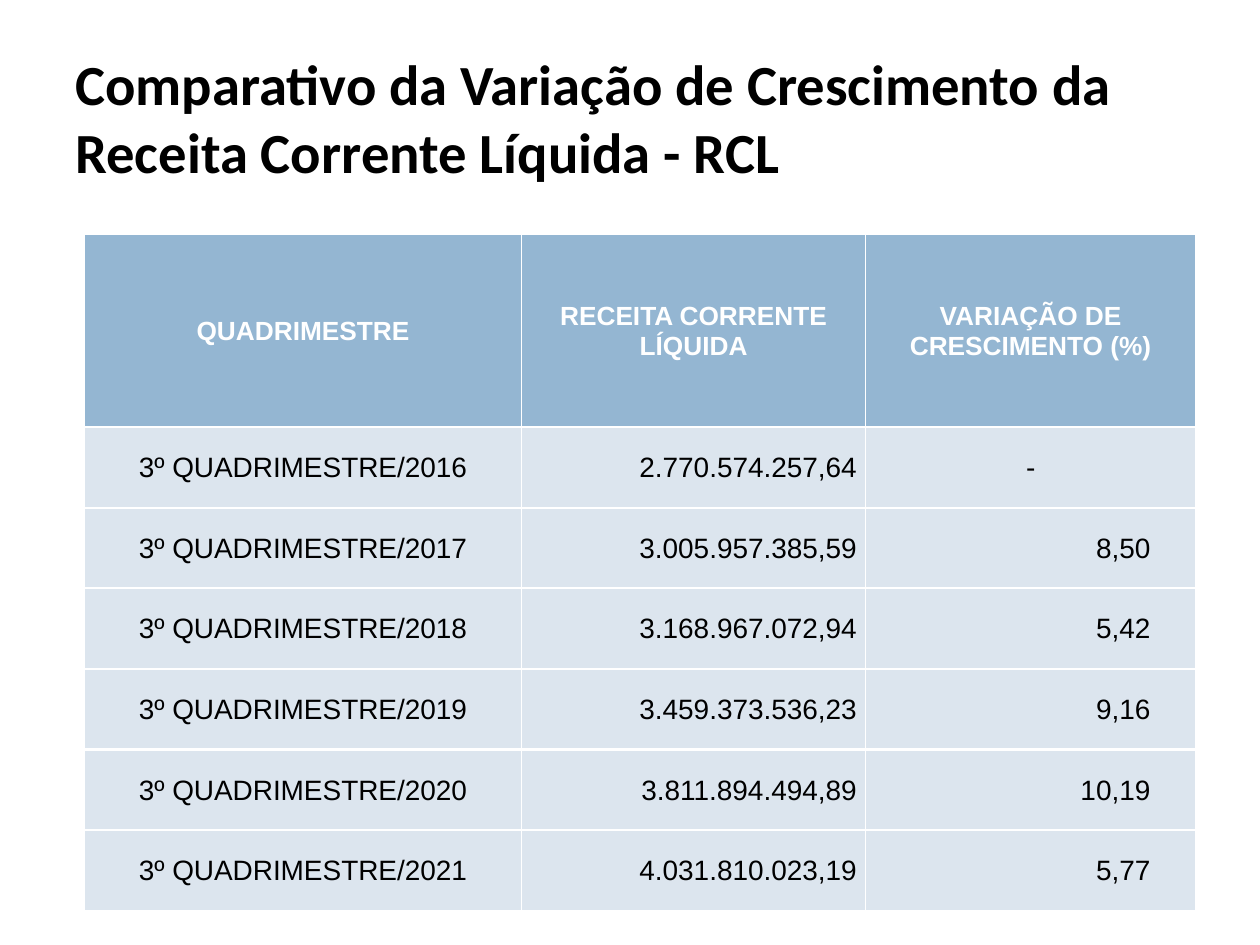
from lxml.etree import SubElement
from pptx import Presentation
from pptx.dml.color import RGBColor
from pptx.enum.text import MSO_ANCHOR as Anchor, PP_ALIGN as Align
from pptx.oxml.ns import qn
from pptx.util import Inches, Pt


def style_text(frame, font_name, size, color, bold, align):
    frame.vertical_anchor = Anchor.MIDDLE
    for paragraph in frame.paragraphs:
        paragraph.alignment = align
        for run in paragraph.runs:
            run.font.name = font_name
            run.font.size = Pt(size)
            run.font.bold = bold
            run.font.color.rgb = RGBColor.from_string(color)


def add_borders(cell, top, bottom):
    """Draw white cell borders; call before filling, as the schema puts lines first."""
    properties = cell._tc.get_or_add_tcPr()
    for side, width in (("L", 1), ("R", 1), ("T", top), ("B", bottom)):
        line = SubElement(properties, qn(f"a:ln{side}"), w=str(Pt(width)))
        fill = SubElement(line, qn("a:solidFill"))
        SubElement(fill, qn("a:srgbClr"), val="FFFFFF")


prs = Presentation()
prs.slide_width, prs.slide_height = Inches(10), Inches(7.5)
slide = prs.slides.add_slide(prs.slide_layouts[6])

title = slide.shapes.add_textbox(Inches(0.5), Inches(0.3), Inches(9), Inches(1.25)).text_frame
title.word_wrap = True
title.text = "Comparativo da Variação de Crescimento da Receita Corrente Líquida - RCL"
style_text(title, "Calibri", 32.4, "000000", True, Align.LEFT)

header = ("QUADRIMESTRE", "RECEITA CORRENTE LÍQUIDA", "VARIAÇÃO DE CRESCIMENTO (%)")
results = [
    (2016, "2.770.574.257,64", "-"),
    (2017, "3.005.957.385,59", "8,50"),
    (2018, "3.168.967.072,94", "5,42"),
    (2019, "3.459.373.536,23", "9,16"),
    (2020, "3.811.894.494,89", "10,19"),
    (2021, "4.031.810.023,19", "5,77"),
]
rows = [header] + [(f"3º QUADRIMESTRE/{year}", revenue, growth)
                   for year, revenue, growth in results]
column_widths = (3.47, 2.73, 2.62)
header_height, row_height = 1.53, 0.64
right_insets = (0.01, 0.07, 0.36)
last_row = len(rows) - 1

table = slide.shapes.add_table(
    len(rows), len(header), Inches(0.67), Inches(1.86),
    Inches(sum(column_widths)), Inches(header_height + row_height * last_row)).table
for column, width in zip(table.columns, column_widths):
    column.width = Inches(width)

for r, values in enumerate(rows):
    is_header = r == 0
    table.rows[r].height = Inches(header_height if is_header else row_height)
    for c, value in enumerate(values):
        cell = table.cell(r, c)
        is_number = not is_header and c > 0 and value != "-"
        cell.text_frame.text = value
        cell.margin_left = cell.margin_top = Inches(0.01)
        cell.margin_right = Inches(right_insets[c] if is_number else 0.01)
        cell.margin_bottom = 0
        cell.vertical_anchor = Anchor.MIDDLE
        add_borders(cell, 1 if is_header else 1.5, 1 if r == last_row else 1.5)
        cell.fill.solid()
        cell.fill.fore_color.rgb = RGBColor.from_string("94B6D2" if is_header else "DCE5EE")
        style_text(cell.text_frame, "Arial", 15 if is_header else 16,
                   "FFFFFF" if is_header else "000000", is_header,
                   Align.RIGHT if is_number else Align.CENTER)

prs.save("out.pptx")
